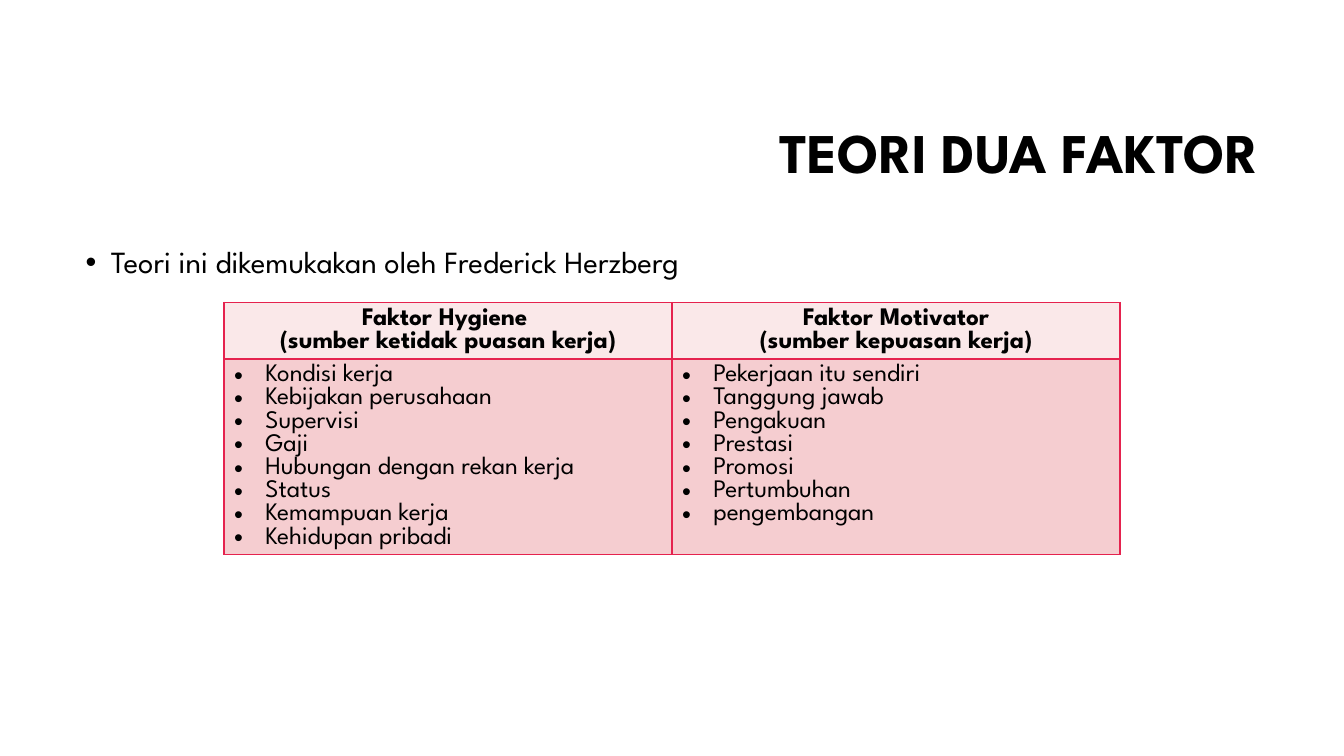
from pptx import Presentation, util as u
from pptx.dml.color import RGBColor
from pptx.enum import text
from pptx.oxml import parse_xml
from pptx.oxml.ns import nsdecls

COLORS = {"ink": "000000", "border": "E5224E", "header": "FAE8E9", "body": "F5CDD0"}
FONT = "League Spartan"
COLUMNS, ROWS = 160, 90  # grid of twelfths of an inch

FACTORS = {
    ("Faktor Hygiene ", "(sumber ketidak puasan kerja)"): [
        "Kondisi kerja", "Kebijakan perusahaan", "Supervisi", "Gaji",
        "Hubungan dengan rekan kerja", "Status", "Kemampuan kerja", "Kehidupan pribadi"],
    ("Faktor Motivator", "(sumber kepuasan kerja)"): [
        "Pekerjaan itu sendiri", "Tanggung jawab", "Pengakuan", "Prestasi",
        "Promosi", "Pertumbuhan", "pengembangan"],
}


def write(frame, lines, size=18, bold=False, align=text.PP_ALIGN.LEFT, indent=None, spacing=None):
    """Fill a text frame with one paragraph per line."""
    for number, line in enumerate(lines):
        paragraph = frame.add_paragraph() if number else frame.paragraphs[0]
        paragraph.alignment = align
        paragraph.space_before = u.Pt(0)
        if spacing:
            paragraph.line_spacing = spacing
        if indent:
            properties = paragraph._p.get_or_add_pPr()
            properties.set("marL", str(u.Inches(indent)))
            properties.set("indent", str(-u.Inches(indent)))
            properties.append(parse_xml(f'<a:buFont {nsdecls("a")} typeface="Arial"/>'))
            properties.append(parse_xml(f'<a:buChar {nsdecls("a")} char="•"/>'))
        run = paragraph.add_run()
        run.text = line
        run.font.name, run.font.size, run.font.bold = FONT, u.Pt(size), bold
        run.font.color.rgb = RGBColor.from_string(COLORS["ink"])


class FactorSlide:
    def __init__(self, deck):
        self.cell_width = deck.slide_width / COLUMNS
        self.cell_height = deck.slide_height / ROWS
        self.slide = deck.slides.add_slide(deck.slide_layouts[1])

    def area(self, column, row, columns, rows):
        return (round(column * self.cell_width), round(row * self.cell_height),
                round(columns * self.cell_width), round(rows * self.cell_height))

    def placeholder(self, index, place, lines, anchor, **style):
        holder = self.slide.placeholders[index]
        holder.left, holder.top, holder.width, holder.height = self.area(*place)
        frame = holder.text_frame
        frame.word_wrap = True
        frame.auto_size = text.MSO_AUTO_SIZE.NONE
        frame.vertical_anchor = anchor
        write(frame, lines, **style)

    def cell(self, cell, lines, fill, **style):
        write(cell.text_frame, lines, **style)
        cell.fill.solid()
        cell.fill.fore_color.rgb = RGBColor.from_string(COLORS[fill])
        properties = cell._tc.get_or_add_tcPr()
        for position, side in enumerate("LRTB"):
            properties.insert(position, parse_xml(
                f'<a:ln{side} {nsdecls("a")} w="{u.Pt(1)}"><a:solidFill>'
                f'<a:srgbClr val="{COLORS["border"]}"/></a:solidFill></a:ln{side}>'))

    def table(self, place, factors):
        table = self.slide.shapes.add_table(2, len(factors), *self.area(*place)).table
        for row in table.rows:
            row.height = u.Inches(0.41)
        for column, (heading, items) in enumerate(factors.items()):
            self.cell(table.cell(0, column), heading, "header",
                      bold=True, align=text.PP_ALIGN.CENTER)
            self.cell(table.cell(1, column), items, "body", indent=0.31)


def main():
    deck = Presentation()
    deck.slide_width, deck.slide_height = u.Inches(13.33), u.Inches(7.5)
    page = FactorSlide(deck)

    # Title and opening statement
    page.placeholder(0, (38, 10, 113, 17), ["TEORI DUA FAKTOR"], text.MSO_ANCHOR.MIDDLE,
                     size=40, bold=True, align=text.PP_ALIGN.RIGHT, spacing=0.9)
    page.placeholder(1, (9, 28.8, 142, 52.8), ["Teori ini dikemukakan oleh Frederick Herzberg"],
                     text.MSO_ANCHOR.TOP, size=22, indent=0.25, spacing=0.9)

    # Comparison of the two factors
    page.table((26.67, 36, 106.67, 9.84), FACTORS)

    deck.save("out.pptx")


if __name__ == "__main__":
    main()
